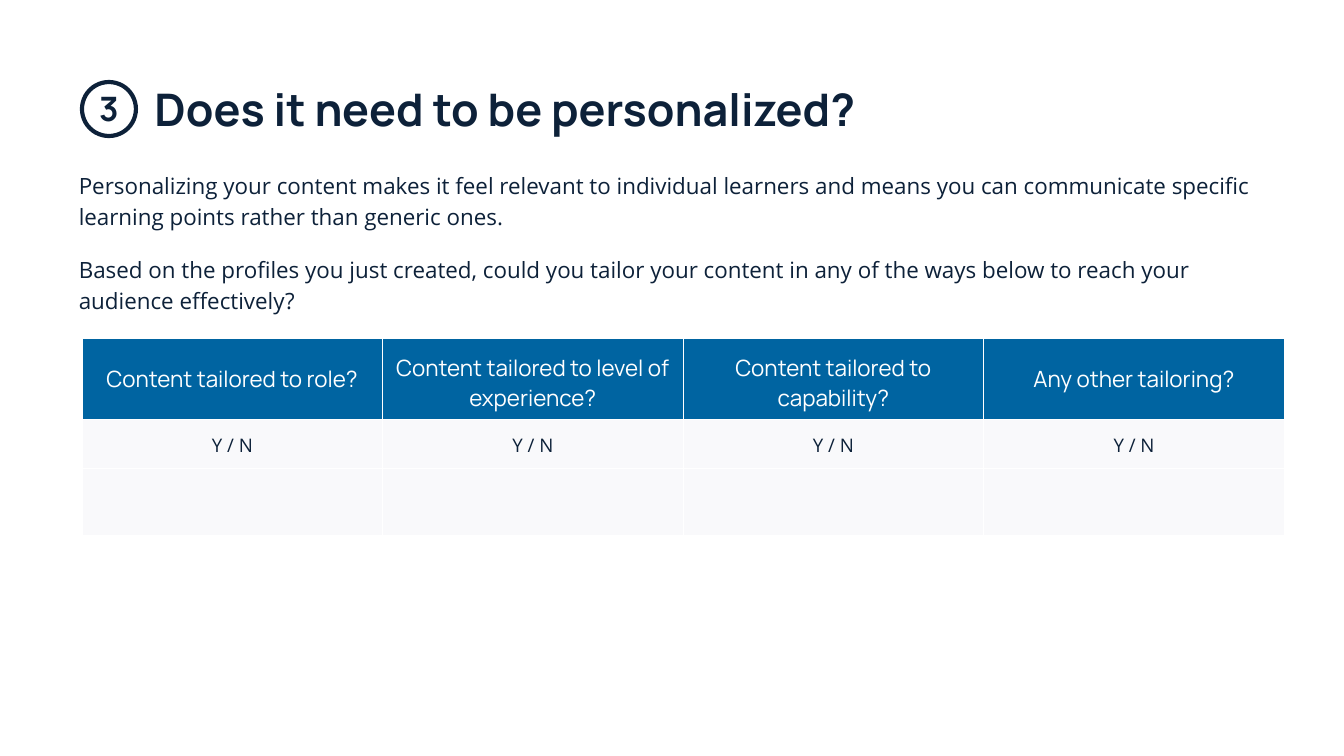
"""Build the slide that asks whether content needs to be personalized."""
import pptx
import pptx.dml.color
import pptx.enum.shapes
import pptx.enum.text
import pptx.oxml
import pptx.oxml.ns
import pptx.util
from pptx.util import Cm, Pt

NAVY, BLUE, PALE, WHITE = "0D2139", "0064A1", "F9F9FB", "FFFFFF"
HEADING_FONT, BODY_FONT = "Manrope", "Open Sans"

NUMBER = "3"
TITLE = "Does it need to be personalized?"
INTRO = [
    "Personalizing your content makes it feel relevant to individual learners and means "
    "you can communicate specific learning points rather than generic ones.",
    "Based on the profiles you just created, could you tailor your content in any of the "
    "ways below to reach your audience effectively?",
]
QUESTIONS = [
    "Content tailored to role?",
    "Content tailored to level of experience?",
    "Content tailored to capability?",
    "Any other tailoring?",
]
ANSWER = "Y / N"
ROWS = [
    (QUESTIONS, 1.51, BLUE, (HEADING_FONT, 12, WHITE)),
    ([ANSWER] * len(QUESTIONS), 0.93, PALE, (BODY_FONT, 10, NAVY)),
    ([""] * len(QUESTIONS), 1.26, PALE, (BODY_FONT, 10, NAVY)),
]
LEFT, TABLE_TOP, COLUMN_WIDTH, INSET = 1.55, 6.4, 5.68, 0.25


def color(value):
    return pptx.dml.color.RGBColor.from_string(value)


def style(paragraph, family, size, ink, bold=False):
    for run in paragraph.runs:
        run.font.name, run.font.size, run.font.bold = family, Pt(size), bold
        run.font.color.rgb = color(ink)


def set_margins(holder):
    holder.margin_left = holder.margin_right = Cm(INSET)
    holder.margin_top = holder.margin_bottom = Cm(INSET)


def add_text(slide, place, texts, *look):
    frame = slide.shapes.add_textbox(*map(Cm, place)).text_frame
    frame.word_wrap = True
    set_margins(frame)
    frame.text = "\n".join(texts)
    for paragraph in frame.paragraphs:
        style(paragraph, *look)
    return frame.paragraphs


def add_borders(cell):
    properties = cell._tc.get_or_add_tcPr()
    for index, side in enumerate(("lnL", "lnR", "lnT", "lnB")):
        properties.insert(index, pptx.oxml.parse_xml(
            f'<a:{side} {pptx.oxml.ns.nsdecls("a")} w="{Pt(0.75)}"><a:solidFill>'
            f'<a:srgbClr val="{WHITE}"/></a:solidFill></a:{side}>'))


def add_questions(slide):
    height = sum(row[1] for row in ROWS)
    table = slide.shapes.add_table(
        len(ROWS), len(QUESTIONS), Cm(LEFT), Cm(TABLE_TOP),
        Cm(COLUMN_WIDTH * len(QUESTIONS)), Cm(height)).table
    table.first_row = table.horz_banding = False
    for column in table.columns:
        column.width = Cm(COLUMN_WIDTH)
    for row, (texts, row_height, fill, look) in zip(table.rows, ROWS):
        row.height = Cm(row_height)
        for cell, text in zip(row.cells, texts):
            cell.text = text
            set_margins(cell)
            if fill == BLUE:
                cell.vertical_anchor = pptx.enum.text.MSO_ANCHOR.MIDDLE
            cell.fill.solid()
            cell.fill.fore_color.rgb = color(fill)
            add_borders(cell)
            paragraph = cell.text_frame.paragraphs[0]
            paragraph.alignment = pptx.enum.text.PP_ALIGN.CENTER
            style(paragraph, *look)


def main():
    deck = pptx.Presentation()
    deck.slide_width, deck.slide_height = Cm(25.4), Cm(14.28)
    slide = deck.slides.add_slide(deck.slide_layouts[6])

    add_text(slide, (2.67, 1.3, 15.52, 1.55), [TITLE], HEADING_FONT, 24, NAVY, True)

    intro = add_text(slide, (1.24, 2.92, 23.04, 3.23), INTRO, BODY_FONT, 12, NAVY)
    for paragraph in intro:
        paragraph.line_spacing = 1.15
    for paragraph in intro[1:]:
        paragraph.space_before = paragraph.space_after = Pt(12)

    ring = slide.shapes.add_shape(
        pptx.enum.shapes.MSO_SHAPE.OVAL, Cm(LEFT), Cm(1.55), Cm(1.02), Cm(1.02))
    ring.shadow.inherit = False
    ring.fill.background()
    ring.line.color.rgb = color(NAVY)
    ring.line.width = Pt(2.25)

    number = add_text(slide, (LEFT, 1.42, 1.02, 1.02), [NUMBER], HEADING_FONT, 18, NAVY, True)
    number[0].alignment = pptx.enum.text.PP_ALIGN.CENTER

    add_questions(slide)
    deck.save("out.pptx")


if __name__ == "__main__":
    main()
